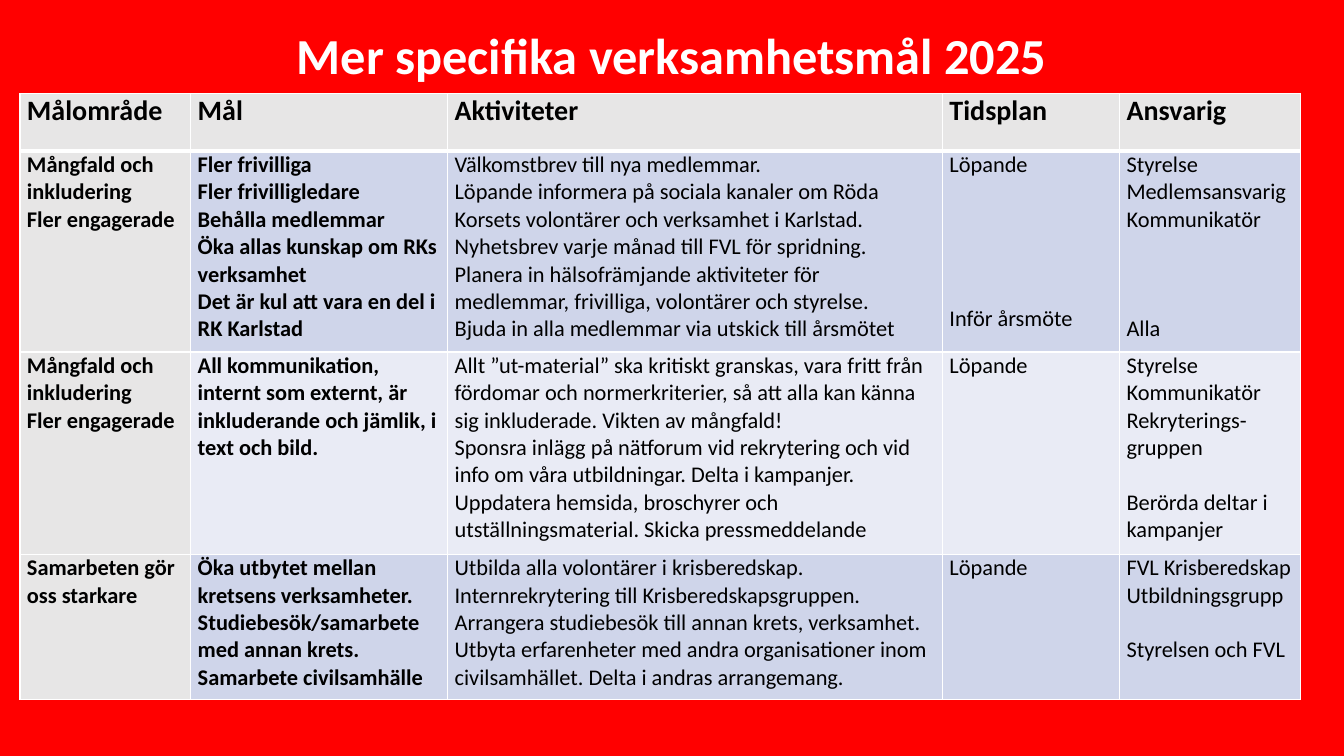
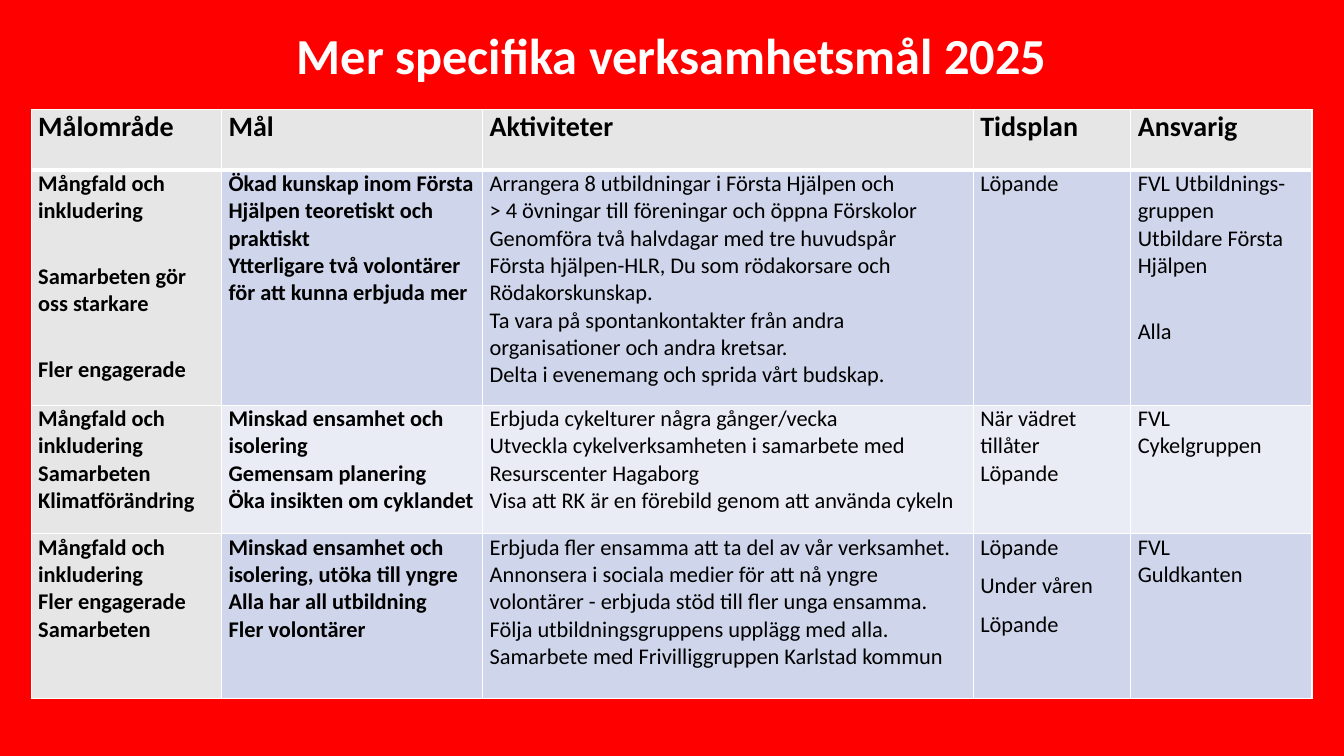
from dataclasses import dataclass

from lxml.etree import SubElement
from pptx import Presentation
from pptx.dml.color import RGBColor
from pptx.enum.text import MSO_ANCHOR, PP_ALIGN
from pptx.oxml.ns import qn
from pptx.util import Pt


@dataclass(frozen=True)
class Theme:
    font: str = "Calibri"
    background: str = "FF0000"
    title: str = "FFFFFF"
    text: str = "000000"
    label_fill: str = "E7E6E6"
    bands: tuple = ("CFD5EA", "E9EBF5")
    border: str = "FFFFFF"
    title_size: float = 36
    header_size: float = 20
    body_size: float = 16
    line: float = 19.5
    paragraph_gap: float = 8
    thin: float = 1
    thick: float = 3


@dataclass(frozen=True)
class Para:
    """A paragraph; before is the space above it in points."""
    text: str
    before: float = 0


THEME = Theme()
LINE, GAP = THEME.line, THEME.paragraph_gap
HEADING = "Mer specifika verksamhetsmål 2025"
HEADERS = ["Målområde", "Mål", "Aktiviteter", "Tidsplan", "Ansvarig"]
DIVERSITY = "Mångfald och inkludering"

ENGAGEMENT = dict(
    left=14.3, top=67,
    widths=[122, 183.5, 353.5, 126.5, 129.5],
    heights=[41, 143.5, 144.5, 103.5],
    goals=[
        [
            f"{DIVERSITY}\nFler engagerade",
            "Fler frivilliga\nFler frivilligledare\nBehålla medlemmar\n"
            "Öka allas kunskap om RKs verksamhet\n"
            "Det är kul att vara en del i RK Karlstad",
            "Välkomstbrev till nya medlemmar.\n"
            "Löpande informera på sociala kanaler om Röda Korsets volontärer "
            "och verksamhet i Karlstad.\n"
            "Nyhetsbrev varje månad till FVL för spridning.\n"
            "Planera in hälsofrämjande aktiviteter för medlemmar, frivilliga, "
            "volontärer och styrelse.\n"
            "Bjuda in alla medlemmar via utskick till årsmötet",
            [Para("Löpande"), Para("Inför årsmöte", 3 * LINE + 4 * GAP)],
            [Para("Styrelse\nMedlemsansvarig\nKommunikatör"),
             Para("Alla", 3 * LINE)],
        ],
        [
            f"{DIVERSITY}\nFler engagerade",
            "All kommunikation, internt som externt, är inkluderande och "
            "jämlik, i text och bild.",
            "Allt ”ut-material” ska kritiskt granskas, vara fritt från "
            "fördomar och normerkriterier, så att alla kan känna sig "
            "inkluderade. Vikten av mångfald!\n"
            "Sponsra inlägg på nätforum vid rekrytering och vid info om våra "
            "utbildningar. Delta i kampanjer.\n"
            "Uppdatera hemsida, broschyrer och utställningsmaterial. "
            "Skicka pressmeddelande",
            "Löpande",
            [Para("Styrelse Kommunikatör\nRekryterings-gruppen"),
             Para("Berörda deltar i kampanjer", LINE)],
        ],
        [
            "Samarbeten gör oss starkare",
            "Öka utbytet mellan kretsens verksamheter.\n"
            "Studiebesök/samarbete med annan krets.\n"
            "Samarbete civilsamhälle",
            "Utbilda alla volontärer i krisberedskap.\n"
            "Internrekrytering till Krisberedskapsgruppen.\n"
            "Arrangera studiebesök till annan krets, verksamhet.\n"
            "Utbyta erfarenheter med andra organisationer inom "
            "civilsamhället. Delta i andras arrangemang.",
            "Löpande",
            [Para("FVL Krisberedskap\nUtbildningsgrupp"),
             Para("Styrelsen och FVL", LINE)],
        ],
    ],
)

COMMUNITY = dict(
    left=22.3, top=78.4,
    widths=[136, 186.5, 350.5, 112.5, 129.5],
    heights=[43, 168, 92, 117.5],
    goals=[
        [
            [Para(DIVERSITY),
             Para("Samarbeten gör oss starkare", LINE + GAP),
             Para("Fler engagerade", LINE + GAP)],
            [Para("Ökad kunskap inom Första Hjälpen teoretiskt och praktiskt"),
             Para("Ytterligare två volontärer för att kunna erbjuda mer")],
            [Para("Arrangera 8 utbildningar i Första Hjälpen och\n"
                  "> 4 övningar till föreningar och öppna Förskolor"),
             Para("Genomföra två halvdagar med tre huvudspår"),
             Para("Första hjälpen-HLR, Du som rödakorsare och "
                  "Rödakorskunskap.\n"
                  "Ta vara på spontankontakter från andra organisationer "
                  "och andra kretsar."),
             Para("Delta i evenemang och sprida vårt budskap.")],
            "Löpande",
            [Para("FVL Utbildnings-gruppen\nUtbildare Första Hjälpen"),
             Para("Alla", LINE + GAP)],
        ],
        [
            f"{DIVERSITY}\nSamarbeten\nKlimatförändring",
            "Minskad ensamhet och isolering\nGemensam planering\n"
            "Öka insikten om cyklandet",
            "Erbjuda cykelturer några gånger/vecka\n"
            "Utveckla cykelverksamheten i samarbete med Resurscenter "
            "Hagaborg\n"
            "Visa att RK är en förebild genom att använda cykeln",
            "När vädret tillåter\nLöpande",
            "FVL\nCykelgruppen",
        ],
        [
            f"{DIVERSITY}\nFler engagerade\nSamarbeten",
            "Minskad ensamhet och isolering, utöka till yngre\n"
            "Alla har all utbildning\nFler volontärer",
            [Para("Erbjuda fler ensamma att ta del av vår verksamhet. "
                  "Annonsera i sociala medier för att nå yngre volontärer - "
                  "erbjuda stöd till fler unga ensamma.\n"
                  "Följa utbildningsgruppens upplägg med alla."),
             Para("Samarbete med Frivilliggruppen Karlstad kommun")],
            [Para("Löpande"), Para("Under våren", GAP), Para("Löpande", GAP)],
            "FVL\nGuldkanten",
        ],
    ],
)


def style_font(font, size, color, bold):
    for attribute, value in dict(name=THEME.font, size=Pt(size), bold=bold).items():
        setattr(font, attribute, value)
    font.color.rgb = RGBColor.from_string(color)


def write_paragraphs(frame, paragraphs, size, color, bold):
    for index, para in enumerate(paragraphs):
        paragraph = frame.add_paragraph() if index else frame.paragraphs[0]
        paragraph.text = para.text
        if para.before:
            paragraph.space_before = Pt(para.before)
        for run in paragraph.runs:
            style_font(run.font, size, color, bold)


def add_title(slide, text):
    frame = slide.shapes.add_textbox(Pt(66), Pt(10), Pt(828), Pt(57)).text_frame
    frame.word_wrap = True
    frame.vertical_anchor = MSO_ANCHOR.MIDDLE
    write_paragraphs(frame, [Para(text)], THEME.title_size, THEME.title, True)
    frame.paragraphs[0].alignment = PP_ALIGN.CENTER


def add_borders(cell, top, bottom):
    """Draw the four cell borders; call before the cell gets its fill."""
    properties = cell._tc.get_or_add_tcPr()
    widths = dict(lnL=THEME.thin, lnR=THEME.thin, lnT=top, lnB=bottom)
    for side, width in widths.items():
        border = SubElement(properties, qn(f"a:{side}"), w=str(Pt(width)))
        fill = SubElement(border, qn("a:solidFill"))
        SubElement(fill, qn("a:srgbClr"), val=THEME.border)


def fill_cell(cell, content, row, column):
    header = row == 0
    add_borders(cell,
                top=THEME.thick if row == 1 else THEME.thin,
                bottom=THEME.thick if header else THEME.thin)
    cell.fill.solid()
    band = THEME.bands[(row - 1) % len(THEME.bands)]
    cell.fill.fore_color.rgb = RGBColor.from_string(
        THEME.label_fill if header or column == 0 else band)
    margins = dict(margin_left=5, margin_right=5, margin_top=0, margin_bottom=0)
    for attribute, value in margins.items():
        setattr(cell, attribute, Pt(value))
    paragraphs = [Para(content)] if isinstance(content, str) else content
    size = THEME.header_size if header else THEME.body_size
    write_paragraphs(cell.text_frame, paragraphs, size, THEME.text,
                     header or column < 2)


def add_goal_table(slide, left, top, widths, heights, goals):
    table = slide.shapes.add_table(
        len(heights), len(widths), Pt(left), Pt(top),
        Pt(sum(widths)), Pt(sum(heights))).table
    table.horz_banding = False
    for column, width in zip(table.columns, widths):
        column.width = Pt(width)
    for row, height in zip(table.rows, heights):
        row.height = Pt(height)
    for row, contents in enumerate([HEADERS, *goals]):
        for column, content in enumerate(contents):
            fill_cell(table.cell(row, column), content, row, column)


def main():
    deck = Presentation()
    deck.slide_width, deck.slide_height = Pt(960), Pt(540)
    background = deck.slide_master.background.fill
    background.solid()
    background.fore_color.rgb = RGBColor.from_string(THEME.background)
    for plan in (ENGAGEMENT, COMMUNITY):
        slide = deck.slides.add_slide(deck.slide_layouts[6])
        add_title(slide, HEADING)
        add_goal_table(slide, **plan)
    deck.save("out.pptx")


if __name__ == "__main__":
    main()
